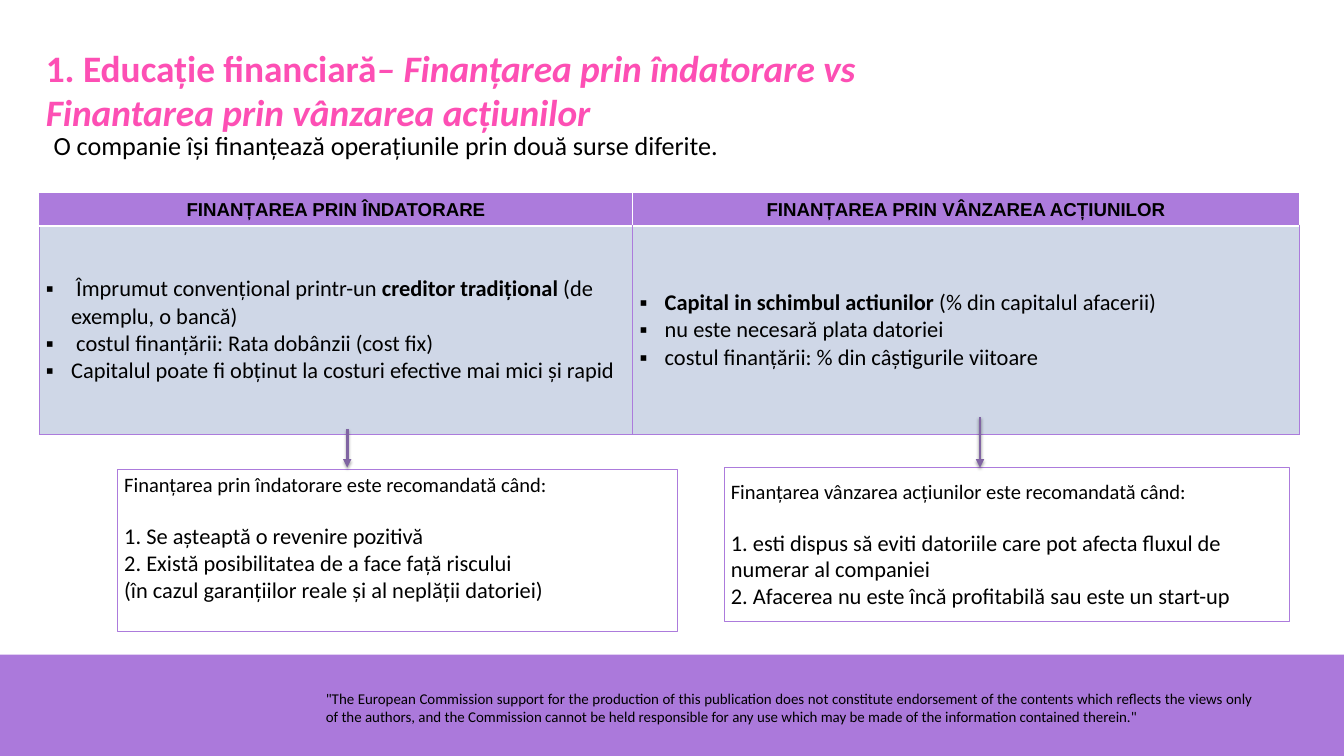
"""Build the slide comparing debt financing with equity financing."""
from lxml.etree import SubElement
from pptx import Presentation
from pptx.dml.color import RGBColor
from pptx.enum.shapes import MSO_CONNECTOR as Connector, MSO_SHAPE as Shape
from pptx.enum.text import MSO_ANCHOR as Anchor, PP_ALIGN as Align
from pptx.oxml import parse_xml
from pptx.oxml.ns import nsdecls, qn
from pptx.util import Pt

BLACK = RGBColor(0x00, 0x00, 0x00)
WHITE = RGBColor(0xFF, 0xFF, 0xFF)
PINK = RGBColor(0xFD, 0x4F, 0xB4)
FOOTER_PURPLE = RGBColor(0xAB, 0x79, 0xDB)
PURPLE = RGBColor(0xAC, 0x7B, 0xDC)
ARROW_PURPLE = RGBColor(0x80, 0x64, 0xA2)
PALE_BLUE = RGBColor(0xCF, 0xD7, 0xE7)

BODY = {"name": "Calibri", "size": Pt(24), "bold": False}
BOLD = {"bold": True}
HEADING = {"name": "Arial", "size": Pt(20), "bold": True}
TITLE = {"size": Pt(40), "bold": True}
LEAD = {"size": Pt(22)}

TITLE_RUNS = [
    ("1. Educație financiară", TITLE),
    ("– Finanțarea prin îndatorare vs Finantarea prin vânzarea acțiunilor",
     {**TITLE, "italic": True}),
]
INTRO = " O companie își finanțează operațiunile prin două surse diferite."
DISCLAIMER = (
    '"The European Commission support for the production of this publication does not '
    "constitute endorsement of the contents which reflects the views only of the authors, "
    "and the Commission cannot be held responsible for any use which may be made of the "
    'information contained therein."'
)
SOURCES = [
    {
        "heading": "FINANȚAREA PRIN ÎNDATORARE",
        "width": 636,
        "features": [
            [(" Împrumut convențional printr-un ", {}), ("creditor tradițional", BOLD),
             (" (de exemplu, o bancă)", {})],
            [(" costul finanțării: Rata dobânzii (cost fix)", {})],
            [("Capitalul poate fi obținut la costuri efective mai mici și rapid", {})],
        ],
        "lead": "Finanțarea prin îndatorare este recomandată când:",
        "conditions": ["1. Se așteaptă o revenire pozitivă",
                       "2. Există posibilitatea de a face față riscului",
                       "(în cazul garanțiilor reale și al neplății datoriei)"],
        "advice": (126, 502.5, 600, 173.5),
        "inset_top": 3.6,
        "arrow": (372, 459.5, 501),
    },
    {
        "heading": "FINANȚAREA PRIN VÂNZAREA ACȚIUNILOR",
        "width": 714,
        "features": [
            [("Capital in schimbul actiunilor ", BOLD), ("(% din capitalul afacerii)", {})],
            [("nu este necesară plata datoriei", {})],
            [("costul finanțării: % din câștigurile viitoare", {})],
        ],
        "lead": "Finanțarea vânzarea acțiunilor este recomandată când:",
        "conditions": ["1. esti dispus să eviti datoriile care pot afecta fluxul de numerar "
                       "al companiei",
                       "2. Afacerea nu este încă profitabilă sau este un start-up"],
        "advice": (776, 501, 606, 165),
        "inset_top": 12,
        "arrow": (1050, 447, 501),
    },
]
ROW_HEIGHTS = (34.5, 223.5)
HEADER_BORDERS = [
    {"L": (PURPLE, 1), "R": (WHITE, 1), "T": (PURPLE, 1), "B": (WHITE, 3)},
    {"L": (WHITE, 1), "R": (WHITE, 1), "T": (PURPLE, 1), "B": (WHITE, 3)},
]
BODY_BORDERS = {"L": (PURPLE, 1), "R": (PURPLE, 1), "T": (WHITE, 3), "B": (PURPLE, 1)}


def write(frame, paragraphs, colour=BLACK, align=Align.LEFT):
    frame.word_wrap = True
    for index, runs in enumerate(paragraphs):
        paragraph = frame.paragraphs[0] if index == 0 else frame.add_paragraph()
        paragraph.alignment = align
        for text, style in runs:
            run = paragraph.add_run()
            run.text = text
            run.font.color.rgb = colour
            for key, value in {**BODY, **style}.items():
                setattr(run.font, key, value)


def add_text(slide, place, runs, colour=BLACK, align=Align.LEFT):
    frame = slide.shapes.add_textbox(*map(Pt, place)).text_frame
    write(frame, [runs], colour, align)
    return frame


def add_rectangle(slide, place):
    rectangle = slide.shapes.add_shape(Shape.RECTANGLE, *map(Pt, place))
    rectangle.shadow.inherit = False
    return rectangle


def add_bullet(paragraph):
    properties = paragraph._p.get_or_add_pPr()
    properties.set("marL", str(Pt(27)))
    properties.set("indent", str(-Pt(27)))
    colour = SubElement(properties, qn("a:buClr"))
    SubElement(colour, qn("a:srgbClr"), val=str(BLACK))
    SubElement(properties, qn("a:buFont"), typeface="Arial")
    SubElement(properties, qn("a:buChar"), char="▪")


def style_cell(cell, fill, borders):
    cell.vertical_anchor = Anchor.MIDDLE
    cell.fill.solid()
    cell.fill.fore_color.rgb = fill
    properties = cell._tc.get_or_add_tcPr()
    for index, (side, (colour, width)) in enumerate(borders.items()):
        properties.insert(index, parse_xml(
            f'<a:ln{side} {nsdecls("a")} w="{Pt(width)}"><a:solidFill>'
            f'<a:srgbClr val="{colour}"/></a:solidFill></a:ln{side}>'))


def add_comparison(slide):
    widths = [source["width"] for source in SOURCES]
    place = (42, 207.5, sum(widths), sum(ROW_HEIGHTS))
    table = slide.shapes.add_table(2, len(SOURCES), *map(Pt, place)).table
    for row, height in zip(table.rows, ROW_HEIGHTS):
        row.height = Pt(height)
    for index, source in enumerate(SOURCES):
        table.columns[index].width = Pt(source["width"])
        heading, features = table.cell(0, index), table.cell(1, index)
        write(heading.text_frame, [[(source["heading"], HEADING)]], align=Align.CENTER)
        style_cell(heading, PURPLE, HEADER_BORDERS[index])
        write(features.text_frame, source["features"])
        style_cell(features, PALE_BLUE, BODY_BORDERS)
        for paragraph in features.text_frame.paragraphs:
            add_bullet(paragraph)


def add_advice(slide, source):
    advice = add_rectangle(slide, source["advice"])
    advice.fill.background()
    advice.line.color.rgb = PURPLE
    advice.line.width = Pt(0.75)
    frame = advice.text_frame
    frame.vertical_anchor = Anchor.TOP
    frame.margin_top = Pt(source["inset_top"])
    write(frame, [[(source["lead"], LEAD)]] + [[(text, {})] for text in source["conditions"]])
    frame.paragraphs[1].space_before = Pt(27)


def add_arrow(slide, x, top, bottom):
    arrow = slide.shapes.add_connector(Connector.STRAIGHT, Pt(x), Pt(top), Pt(x), Pt(bottom))
    arrow.line.color.rgb = ARROW_PURPLE
    arrow.line.width = Pt(3)
    SubElement(arrow.line._get_or_add_ln(), qn("a:tailEnd"), type="triangle")
    arrow._element.spPr.append(parse_xml(
        f'<a:effectLst {nsdecls("a")}><a:outerShdw blurRad="{Pt(3.1)}" dist="{Pt(1.8)}" '
        f'dir="5400000" rotWithShape="0"><a:srgbClr val="{BLACK}"><a:alpha val="35000"/>'
        "</a:srgbClr></a:outerShdw></a:effectLst>"))


def main():
    deck = Presentation()
    deck.slide_width, deck.slide_height = Pt(1440), Pt(810)
    slide = deck.slides.add_slide(deck.slide_layouts[6])

    footer = add_rectangle(slide, (0, 701.5, 1440, 108.5))
    footer.fill.solid()
    footer.fill.fore_color.rgb = FOOTER_PURPLE
    footer.line.fill.background()
    disclaimer = add_text(slide, (342, 735, 1008, 40), [(DISCLAIMER, {"size": Pt(16)})],
                          align=Align.JUSTIFY)
    disclaimer.paragraphs[0].line_spacing = 1.01

    add_text(slide, (42, 44.5, 984, 104.5), TITLE_RUNS, PINK)
    add_text(slide, (44, 135.5, 1102, 90), [(INTRO, {"size": Pt(28)})], align=Align.JUSTIFY)
    add_comparison(slide)
    for source in SOURCES:
        add_advice(slide, source)
        add_arrow(slide, *source["arrow"])
    deck.save("out.pptx")


if __name__ == "__main__":
    main()
